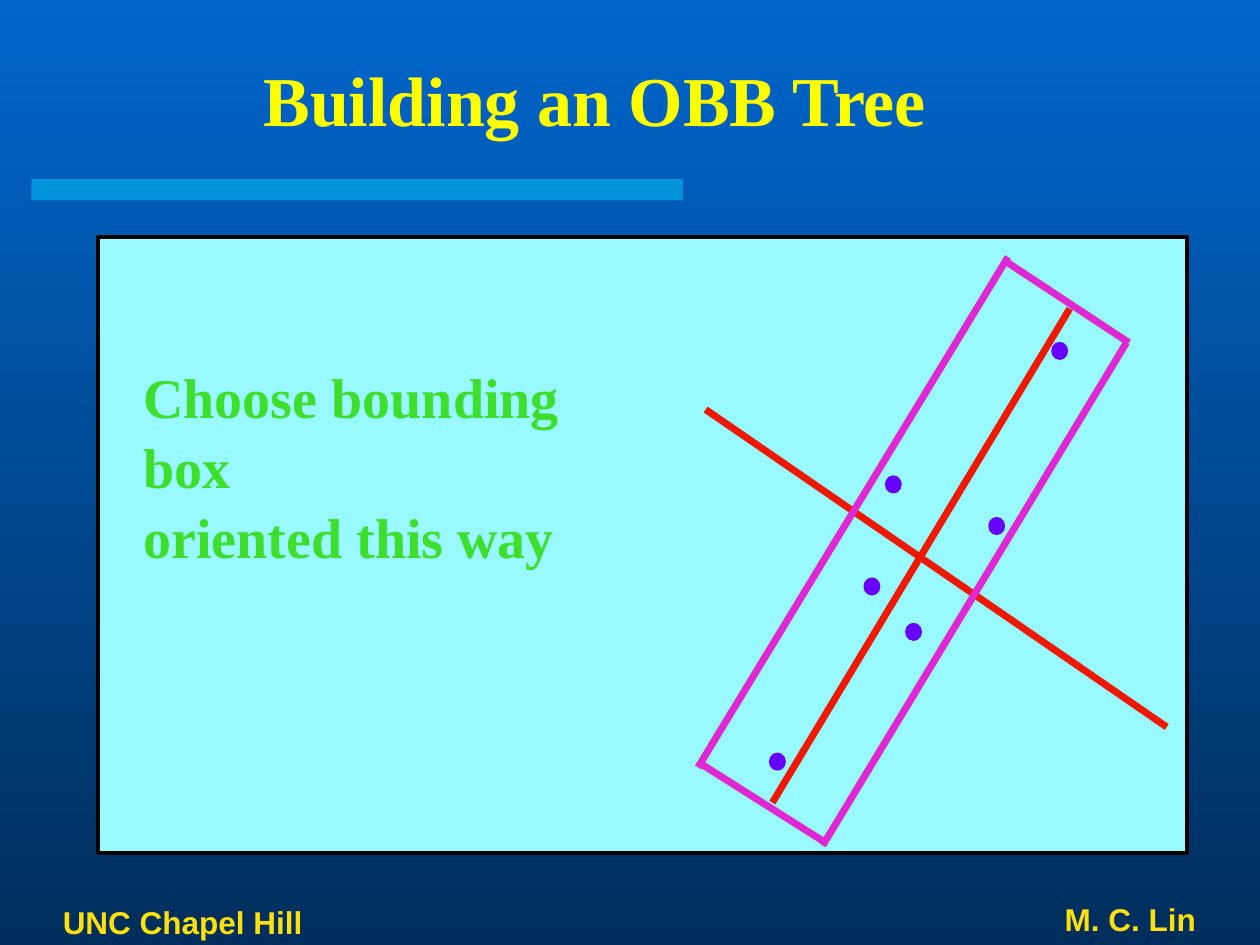
"""Build the OBB tree slide on a grid of 100 columns by 75 rows."""
import pptx
import pptx.dml.color
import pptx.enum.shapes
import pptx.enum.text
import pptx.oxml
import pptx.oxml.ns
import pptx.util

RGB = pptx.dml.color.RGBColor
SHAPE = pptx.enum.shapes.MSO_SHAPE
ALIGN = pptx.enum.text.PP_ALIGN
ANCHOR = pptx.enum.text.MSO_ANCHOR

SKY = RGB(0x00, 0x66, 0xCC)
NAVY = RGB(0x00, 0x2E, 0x5C)
BAR = RGB(0x00, 0xCC, 0xFF)
PANEL = RGB(0x98, 0xFA, 0xFF)
BLACK = RGB(0x00, 0x00, 0x00)
YELLOW = RGB(0xFF, 0xFF, 0x00)
GOLD = RGB(0xFD, 0xE0, 0x0D)
GREEN = RGB(0x3D, 0xDE, 0x2C)
VIOLET = RGB(0x66, 0x00, 0xFF)
RED = RGB(0xED, 0x19, 0x03)
MAGENTA = RGB(0xDF, 0x27, 0xD4)

WIDTH, HEIGHT = pptx.util.Inches(10), pptx.util.Inches(7.5)
COLS, ROWS = 100, 75
DOT_SIZE = (1.2, 1.3)
POINTS = [(83.5, 27.2), (70.3, 37.8), (78.5, 41.1),
          (68.6, 45.9), (71.9, 49.5), (61.1, 59.8)]
AXES = [((92.6, 57.7), (56, 32.5)), ((84.9, 24.5), (61.3, 63.7))]
BOX_SIDES = [((55.4, 60.9), (80, 20.4)), ((79.6, 20.6), (89.6, 27.2)),
             ((89.4, 27.2), (65.3, 67.1)), ((55.6, 60.6), (65.4, 66.8))]


def col(n):
    return int(WIDTH * n / COLS)


def row(n):
    return int(HEIGHT * n / ROWS)


def place(x, y, w, h):
    return col(x), row(y), col(w), row(h)


def paint_background(s):
    fill = s.background.fill
    fill.gradient()
    fill.gradient_angle = 270
    for stop, color in zip(fill.gradient_stops, (SKY, NAVY)):
        stop.color.rgb = color


def add_solid(s, kind, at, fill, line=None, weight=1, alpha=None):
    sp = s.shapes.add_shape(kind, *place(*at))
    sp.shadow.inherit = False
    sp.fill.solid()
    sp.fill.fore_color.rgb = fill
    if line is None:
        sp.line.fill.background()
    else:
        sp.line.color.rgb = line
        sp.line.width = pptx.util.Pt(weight)
    if alpha is not None:
        clr = sp.fill._xPr.find(".//" + pptx.oxml.ns.qn("a:srgbClr"))
        clr.append(pptx.oxml.parse_xml(
            f'<a:alpha {pptx.oxml.ns.nsdecls("a")} val="{alpha * 1000}"/>'))


def add_line(s, start, end, color):
    cn = s.shapes.add_connector(
        pptx.enum.shapes.MSO_CONNECTOR.STRAIGHT,
        col(start[0]), row(start[1]), col(end[0]), row(end[1]))
    cn.line.color.rgb = color
    cn.line.width = pptx.util.Pt(4)
    cn._element.spPr.append(pptx.oxml.parse_xml(
        f'<a:effectLst {pptx.oxml.ns.nsdecls("a")}/>'))


def add_text(s, at, lines, size, font, color, align=ALIGN.LEFT,
             anchor=ANCHOR.MIDDLE, spacing=1.0):
    tf = s.shapes.add_textbox(*place(*at)).text_frame
    tf.word_wrap = True
    tf.vertical_anchor = anchor
    for i, line in enumerate(lines):
        p = tf.add_paragraph() if i else tf.paragraphs[0]
        p.alignment = align
        p.line_spacing = spacing
        r = p.add_run()
        r.text = line
        r.font.size = pptx.util.Pt(size)
        r.font.name = font
        r.font.bold = True
        r.font.color.rgb = color


def main():
    prs = pptx.Presentation()
    prs.slide_width, prs.slide_height = WIDTH, HEIGHT
    s = prs.slides.add_slide(prs.slide_layouts[6])
    paint_background(s)

    add_solid(s, SHAPE.RECTANGLE, (2.5, 14.2, 51.7, 1.7), BAR, alpha=50)
    add_text(s, (4, 71.4, 22, 3.6), ["UNC Chapel Hill"], 18, "Arial", GOLD)
    add_text(s, (52.2, 70.9, 43.7, 4.1), ["M. C. Lin"], 18, "Arial", GOLD,
             align=ALIGN.RIGHT)

    add_solid(s, SHAPE.RECTANGLE, (7.8, 18.8, 86.4, 48.9), PANEL, BLACK, 2)
    add_text(s, (10.4, 28.1, 42, 17),
             ["Choose bounding box", "oriented this way"], 32,
             "Times New Roman", GREEN, anchor=ANCHOR.TOP, spacing=1.04)
    for point in POINTS:
        add_solid(s, SHAPE.OVAL, point + DOT_SIZE, VIOLET, VIOLET)
    for color, segments in ((RED, AXES), (MAGENTA, BOX_SIDES)):
        for start, end in segments:
            add_line(s, start, end, color)

    add_text(s, (2.9, 3.2, 88.6, 9.3), ["Building an OBB Tree"], 40,
             "Times New Roman", YELLOW, align=ALIGN.CENTER)
    prs.save("out.pptx")


if __name__ == "__main__":
    main()
